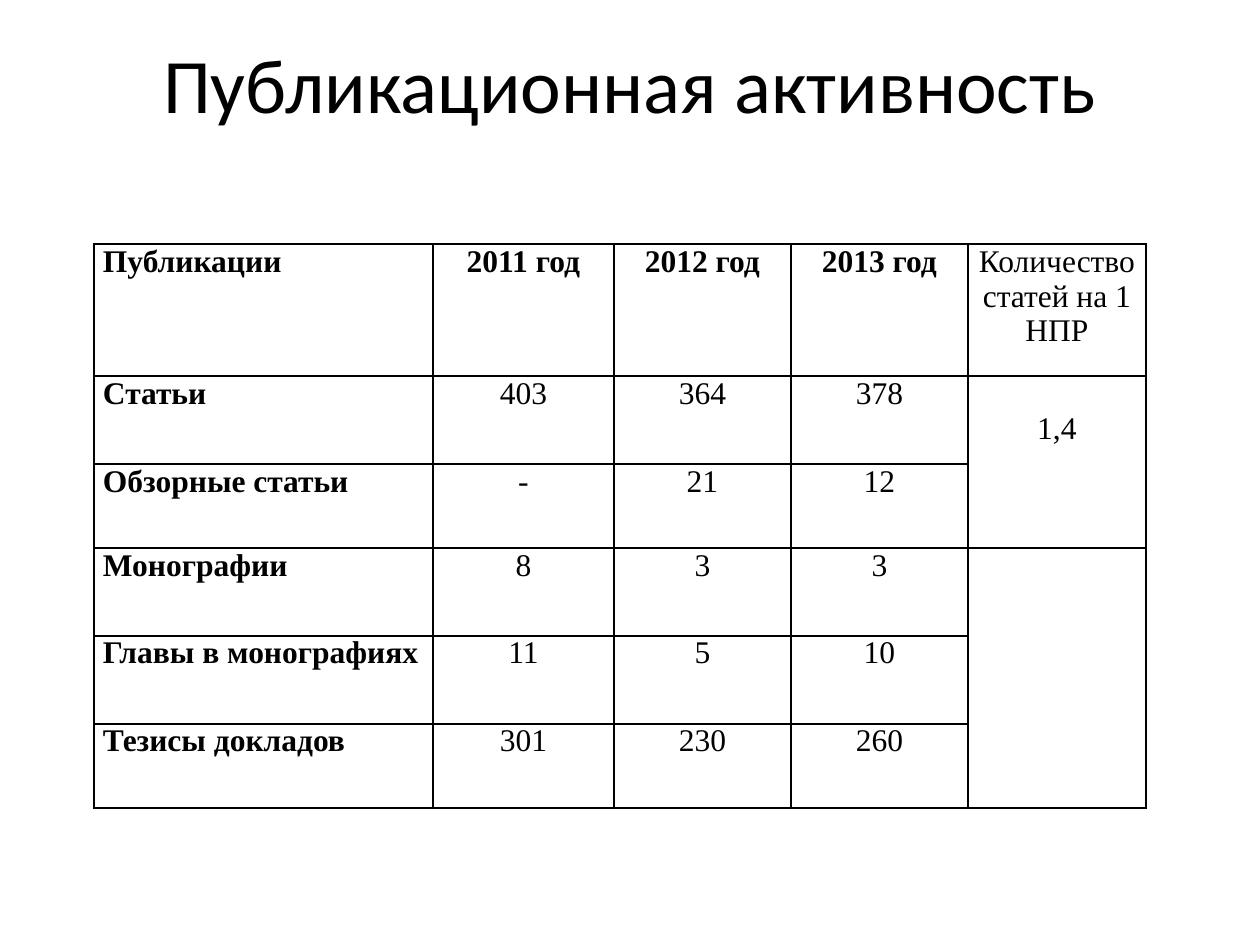
from lxml.etree import SubElement
from pptx import Presentation
from pptx.dml.color import RGBColor
from pptx.enum.text import MSO_ANCHOR as Anchor, PP_ALIGN as Align
from pptx.oxml.ns import qn
from pptx.util import Emu, Pt

TITLE = "Публикационная активность"
HEADER = ["Публикации", "2011 год", "2012 год", "2013 год", "Количество статей на 1 НПР"]
COUNTS = [
    ["Статьи", "403", "364", "378", "1,4"],
    ["Обзорные статьи", "-", "21", "12", ""],
    ["Монографии", "8", "3", "3", ""],
    ["Главы в монографиях", "11", "5", "10", ""],
    ["Тезисы докладов", "301", "230", "260", ""],
]
ROWS = [HEADER] + COUNTS
COLUMN_WIDTHS = [339, 181, 177, 177, 178]
ROW_HEIGHTS = [132, 88, 84, 88, 88, 84]
LAST_COLUMN = len(HEADER) - 1
LAST_ROW = len(ROWS) - 1
RATIO_ROWS = (1, 2)
EMPTY_START = 3
BLACK = "000000"


def px(length):
    return Emu(round(length * 914400 / 126))


def color(value):
    return RGBColor.from_string(value)


def add_text(frame, text, font, size, align, bold=False):
    para = frame.paragraphs[0]
    para.alignment = align
    span = para.add_run()
    span.text = text
    span.font.name = font
    span.font.size = Pt(size)
    span.font.bold = bold
    span.font.color.rgb = color(BLACK)


def add_borders(cell, sides):
    properties = cell._tc.get_or_add_tcPr()
    for side in "LRTB":
        line = SubElement(properties, qn(f"a:ln{side}"), w=str(Pt(1)))
        if side in sides:
            fill = SubElement(line, qn("a:solidFill"))
            SubElement(fill, qn("a:srgbClr"), val=BLACK)
        else:
            SubElement(line, qn("a:noFill"))


def border_sides(row, column):
    if column < LAST_COLUMN or row < EMPTY_START:
        return "LRTB"
    return "LR" + "T" * (row == EMPTY_START) + "B" * (row == LAST_ROW)


def add_title(page):
    box = page.shapes.add_textbox(px(63), px(0), px(1134), px(165))
    frame = box.text_frame
    frame.word_wrap = True
    frame.vertical_anchor = Anchor.MIDDLE
    add_text(frame, TITLE, "Calibri", 44, Align.CENTER)


def add_publications(page):
    table = page.shapes.add_table(
        len(ROWS), len(HEADER), px(94), px(244),
        px(sum(COLUMN_WIDTHS)), px(sum(ROW_HEIGHTS)),
    ).table
    table.first_row = False
    table.horz_banding = False
    for column, width in zip(table.columns, COLUMN_WIDTHS):
        column.width = px(width)
    for row, height in zip(table.rows, ROW_HEIGHTS):
        row.height = px(height)

    for r, texts in enumerate(ROWS):
        for c, text in enumerate(texts):
            cell = table.cell(r, c)
            add_borders(cell, border_sides(r, c))
            cell.fill.background()
            cell.margin_left = cell.margin_right = px(9)
            cell.margin_top = cell.margin_bottom = 0
            if text:
                bold = c == 0 or (r == 0 and c < LAST_COLUMN)
                align = Align.CENTER if c else Align.LEFT
                add_text(cell.text_frame, text, "Times New Roman", 18, align, bold)

    first, last = RATIO_ROWS
    ratio = table.cell(first, LAST_COLUMN)
    ratio.merge(table.cell(last, LAST_COLUMN))
    ratio.margin_top = px(35)


def main():
    deck = Presentation()
    deck.slide_width, deck.slide_height = px(1260), px(945)
    page = deck.slides.add_slide(deck.slide_layouts[6])
    add_title(page)
    add_publications(page)
    deck.save("out.pptx")


if __name__ == "__main__":
    main()
